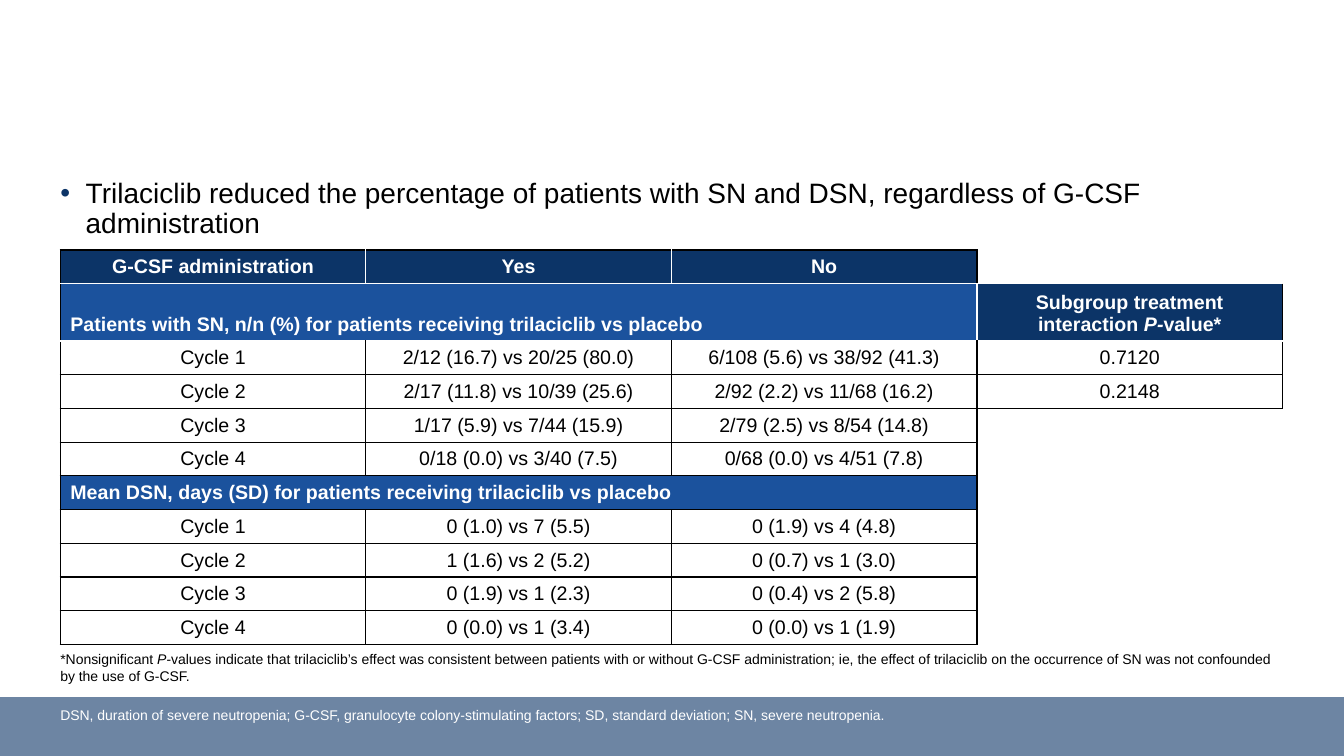
from dataclasses import dataclass

from lxml import etree
from pptx import Presentation
from pptx.dml.color import RGBColor
from pptx.enum.shapes import MSO_SHAPE
from pptx.enum.text import MSO_ANCHOR, PP_ALIGN
from pptx.oxml.ns import qn
from pptx.util import Cm, Pt

RECTANGLE = MSO_SHAPE.RECTANGLE
MIDDLE, BOTTOM = MSO_ANCHOR.MIDDLE, MSO_ANCHOR.BOTTOM
LEFT, CENTER = PP_ALIGN.LEFT, PP_ALIGN.CENTER


@dataclass(frozen=True)
class Theme:
    font: str = "Arial"
    navy: str = "0C3467"
    blue: str = "1B529D"
    white: str = "FFFFFF"
    black: str = "000000"
    body_size: int = 20
    table_size: int = 14
    note_size: int = 10


theme = Theme()


def write_text(paragraph, pieces, size, color, bold=False):
    """Write the pieces as runs; every second piece is italic."""
    for index, piece in enumerate(pieces):
        run = paragraph.add_run()
        run.text = piece
        run.font.name = theme.font
        run.font.size = Pt(size)
        run.font.bold = bold
        run.font.italic = index % 2 == 1
        run.font.color.rgb = RGBColor.from_string(color)


def set_borders(cell, colors):
    """Draw the sides L, R, T and B in 1 pt; a side without a colour is hidden."""
    properties = cell._tc.get_or_add_tcPr()
    for side in "LRTB":
        line = etree.SubElement(properties, qn(f"a:ln{side}"), w=str(Pt(1)))
        if colors.get(side):
            fill = etree.SubElement(line, qn("a:solidFill"))
            etree.SubElement(fill, qn("a:srgbClr"), val=colors[side])
        else:
            etree.SubElement(line, qn("a:noFill"))


presentation = Presentation()
presentation.slide_width = Cm(33.87)
presentation.slide_height = Cm(19.05)
slide = presentation.slides.add_slide(presentation.slide_layouts[6])

# Footer band
band = slide.shapes.add_shape(RECTANGLE, 0, Cm(17.57), Cm(33.87), Cm(1.48))
band.shadow.inherit = False
band.line.fill.background()
band.fill.solid()
band.fill.fore_color.rgb = RGBColor.from_string(theme.navy)
band_color = band._element.spPr.find(f"{qn('a:solidFill')}/{qn('a:srgbClr')}")
etree.SubElement(band_color, qn("a:alpha"), val="60000")

# Abbreviations and footnote
notes = [
    (17.67, 32.6, 0.68, theme.white,
     ["DSN, duration of severe neutropenia; G-CSF, granulocyte colony-stimulating factors; "
      "SD, standard deviation; SN, severe neutropenia."]),
    (16.26, 31.06, 1.12, theme.black,
     ["*Nonsignificant ", "P-",
      "values indicate that trilaciclib’s effect was consistent between patients with or "
      "without G-CSF administration; ie, the effect of trilaciclib on the occurrence of SN "
      "was not confounded by the use of G-CSF."]),
]
for top, width, height, color, pieces in notes:
    note = slide.shapes.add_textbox(Cm(1.27), Cm(top), Cm(width), Cm(height))
    note.text_frame.word_wrap = True
    write_text(note.text_frame.paragraphs[0], pieces, theme.note_size, color)

# Key message
message = slide.shapes.add_textbox(Cm(1.52), Cm(4.52), Cm(30.81), Cm(1.9))
frame = message.text_frame
frame.word_wrap = True
frame.margin_left = frame.margin_right = frame.margin_top = frame.margin_bottom = 0
paragraph = frame.paragraphs[0]
paragraph.line_spacing = 0.9
paragraph.space_after = Pt(6)
properties = paragraph._p.get_or_add_pPr()
properties.set("marL", str(Cm(0.64)))
properties.set("indent", str(-Cm(0.64)))
bullet_color = etree.SubElement(properties, qn("a:buClr"))
etree.SubElement(bullet_color, qn("a:srgbClr"), val=theme.navy)
etree.SubElement(properties, qn("a:buFont"), typeface=theme.font)
etree.SubElement(properties, qn("a:buChar"), char="•")
write_text(paragraph, ["Trilaciclib reduced the percentage of patients with SN and DSN, "
                       "regardless of G-CSF administration"], theme.body_size, theme.black)

# Table content
HEADER, SN_SECTION, DSN_SECTION = 0, 1, 6
P_VALUE = 3
rows = [
    ["G-CSF administration", "Yes", "No", ""],
    ["Patients with SN, n/n (%) for patients receiving trilaciclib vs placebo", "", "",
     ["Subgroup treatment interaction ", "P-", "value*"]],
    ["Cycle 1", "2/12 (16.7) vs 20/25 (80.0)", "6/108 (5.6) vs 38/92 (41.3)", "0.7120"],
    ["Cycle 2", "2/17 (11.8) vs 10/39 (25.6)", "2/92 (2.2) vs 11/68 (16.2)", "0.2148"],
    ["Cycle 3", "1/17 (5.9) vs 7/44 (15.9)", "2/79 (2.5) vs 8/54 (14.8)", ""],
    ["Cycle 4", "0/18 (0.0) vs 3/40 (7.5)", "0/68 (0.0) vs 4/51 (7.8)", ""],
    ["Mean DSN, days (SD) for patients receiving trilaciclib vs placebo", "", "", ""],
    ["Cycle 1", "0 (1.0) vs 7 (5.5)", "0 (1.9) vs 4 (4.8)", ""],
    ["Cycle 2", "1 (1.6) vs 2 (5.2)", "0 (0.7) vs 1 (3.0)", ""],
    ["Cycle 3", "0 (1.9) vs 1 (2.3)", "0 (0.4) vs 2 (5.8)", ""],
    ["Cycle 4", "0 (0.0) vs 1 (3.4)", "0 (0.0) vs 1 (1.9)", ""],
]
table_frame = slide.shapes.add_table(len(rows), 4, Cm(1.52), Cm(6.3), Cm(30.81), Cm(9.93))
table = table_frame.table
table.first_row = table.horz_banding = False
table._tbl.tblPr.find(qn("a:tableStyleId")).text = "{2D5ABB26-0587-4C30-8999-92F81FD0307C}"
for column in table.columns:
    column.width = Cm(7.7)
for row_index, row in enumerate(table.rows):
    row.height = Cm(1.43 if row_index == SN_SECTION else 0.85)
for section in (SN_SECTION, DSN_SECTION):
    table.cell(section, 0).merge(table.cell(section, 2))

# Table cells
for row_index, values in enumerate(rows):
    for column_index, value in enumerate(values):
        cell = table.cell(row_index, column_index)
        is_section = row_index in (SN_SECTION, DSN_SECTION) and column_index < P_VALUE
        is_heading = row_index in (HEADER, SN_SECTION) or is_section
        is_blank = column_index == P_VALUE and not value

        # Borders: black grid, white between headings, open to the right of the grid
        borders = dict.fromkeys("LRTB", theme.black)
        if is_blank:
            last_p_value_above = bool(rows[row_index - 1][P_VALUE]) and row_index > HEADER
            borders = {"L": theme.black, "T": theme.black if last_p_value_above else None}
        elif row_index in (HEADER, SN_SECTION):
            borders["B"] = theme.white
            if column_index > 0:
                borders["L"] = theme.white
            if column_index < 2 or (row_index == SN_SECTION and column_index == 2):
                borders["R"] = theme.white
        if row_index in (SN_SECTION, SN_SECTION + 1):
            borders["T"] = theme.white
        if row_index == SN_SECTION and column_index == P_VALUE:
            borders["T"] = None
        set_borders(cell, borders)

        # Fill
        if is_heading and not is_blank:
            cell.fill.solid()
            fill_color = theme.blue if is_section else theme.navy
            cell.fill.fore_color.rgb = RGBColor.from_string(fill_color)
        else:
            cell.fill.background()

        # Text
        cell.vertical_anchor = BOTTOM if row_index == SN_SECTION else MIDDLE
        paragraph = cell.text_frame.paragraphs[0]
        paragraph.alignment = LEFT if is_section else CENTER
        paragraph.font.size = Pt(theme.table_size)
        if value:
            pieces = value if isinstance(value, list) else [value]
            color = theme.white if is_heading else theme.black
            write_text(paragraph, pieces, theme.table_size, color, is_heading)

presentation.save("out.pptx")
